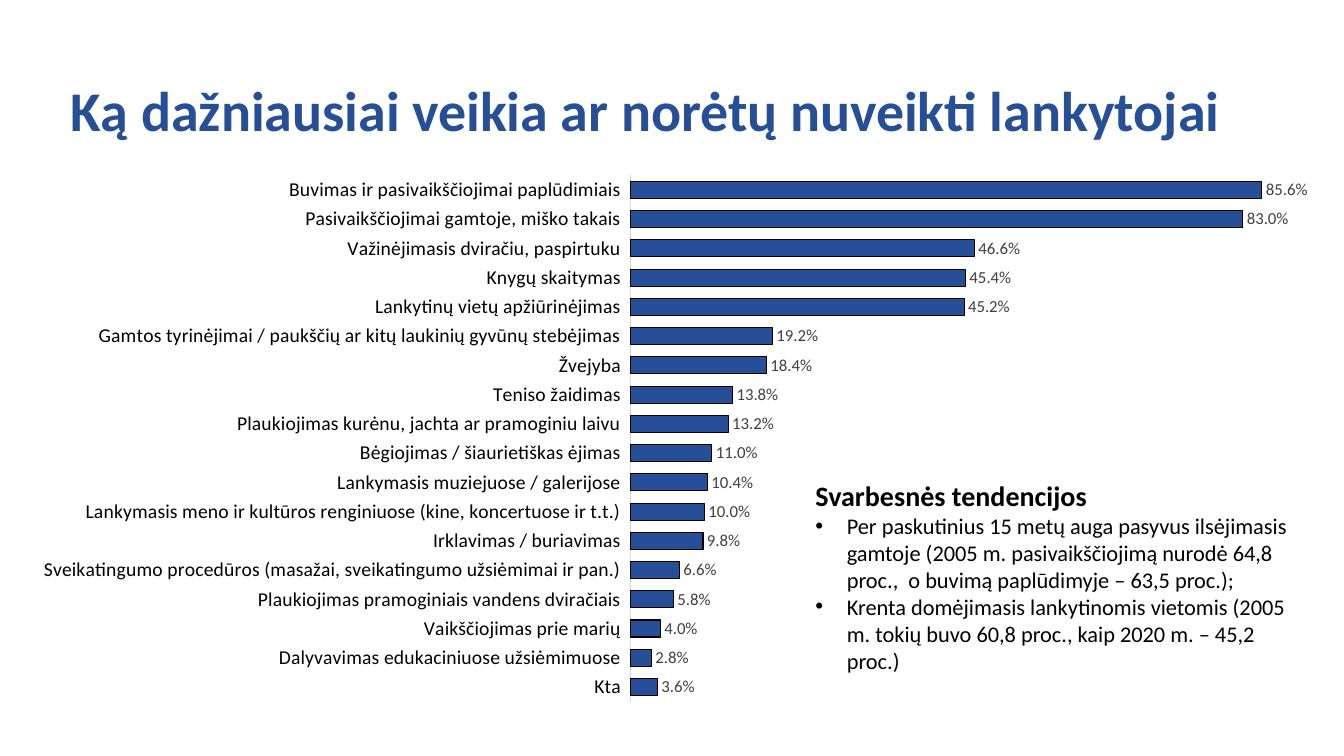
from dataclasses import dataclass
from typing import Any, NamedTuple

from lxml import etree
from pptx import Presentation
from pptx.chart.data import CategoryChartData
from pptx.dml.color import RGBColor
from pptx.enum.chart import XL_CHART_TYPE, XL_LABEL_POSITION, XL_TICK_LABEL_POSITION, XL_TICK_MARK
from pptx.enum.text import MSO_ANCHOR
from pptx.oxml import parse_xml
from pptx.oxml.ns import nsdecls, qn
from pptx.util import Pt

BAR = XL_CHART_TYPE.BAR_CLUSTERED
END = XL_LABEL_POSITION.OUTSIDE_END
LOW = XL_TICK_LABEL_POSITION.LOW
NO_TICK = XL_TICK_MARK.NONE
TOP = MSO_ANCHOR.TOP
MIDDLE = MSO_ANCHOR.MIDDLE


@dataclass(frozen=True)
class Theme:
    font: str = "Calibri"
    blue: RGBColor = RGBColor(0x26, 0x4F, 0x97)
    black: RGBColor = RGBColor(0, 0, 0)
    gray: RGBColor = RGBColor(0x40, 0x40, 0x40)
    pale: RGBColor = RGBColor(0xD9, 0xD9, 0xD9)
    title: float = 40
    head: float = 20
    body: float = 16
    axis: float = 14
    label: float = 12
    base: float = 10
    line: float = 0.75


class Box(NamedTuple):
    left: float
    top: float
    width: float
    height: float


class Bar(NamedTuple):
    name: str
    share: float


@dataclass(frozen=True)
class Para:
    text: str
    size: float
    color: RGBColor
    bold: bool = False
    bullet: bool = False
    space: float = 1.0


THEME = Theme()
SLIDE = (960, 540)
TITLE_BOX = Box(43.2, 28.8, 882.7, 104.4)
CHART_BOX = Box(17.3, 117.4, 925.9, 391.7)
NOTE_BOX = Box(575.3, 338.4, 360.7, 191.5)
PLOT = {"x": 0.468, "y": 0.02, "w": 0.512, "h": 0.96}
INDENT = 22.5
PERCENT = "###0.0%"

BARS = [
    Bar("Buvimas ir pasivaikščiojimai paplūdimiais", 0.856),
    Bar("Pasivaikščiojimai gamtoje, miško takais", 0.83),
    Bar("Važinėjimasis dviračiu, paspirtuku", 0.466),
    Bar("Knygų skaitymas", 0.454),
    Bar("Lankytinų vietų apžiūrinėjimas", 0.452),
    Bar("Gamtos tyrinėjimai / paukščių ar kitų laukinių gyvūnų stebėjimas", 0.192),
    Bar("Žvejyba", 0.184),
    Bar("Teniso žaidimas", 0.138),
    Bar("Plaukiojimas kurėnu, jachta ar pramoginiu laivu", 0.132),
    Bar("Bėgiojimas / šiaurietiškas ėjimas", 0.11),
    Bar("Lankymasis muziejuose / galerijose", 0.104),
    Bar("Lankymasis meno ir kultūros renginiuose (kine, koncertuose ir t.t.)", 0.1),
    Bar("Irklavimas / buriavimas", 0.098),
    Bar("Sveikatingumo procedūros (masažai, sveikatingumo užsiėmimai ir pan.)", 0.066),
    Bar("Plaukiojimas pramoginiais vandens dviračiais", 0.058),
    Bar("Vaikščiojimas prie marių", 0.04),
    Bar("Dalyvavimas edukaciniuose užsiėmimuose", 0.028),
    Bar("Kta", 0.036),
]

TITLE = [
    Para("Ką dažniausiai veikia ar norėtų nuveikti lankytojai",
         THEME.title, THEME.blue, bold=True, space=0.9),
]
NOTES = [
    Para("Svarbesnės tendencijos", THEME.head, THEME.black, bold=True),
    Para("Per paskutinius 15 metų auga pasyvus ilsėjimasis gamtoje "
         "(2005 m. pasivaikščiojimą nurodė 64,8 proc.,  o buvimą paplūdimyje – 63,5 proc.);",
         THEME.body, THEME.black, bullet=True),
    Para("Krenta domėjimasis lankytinomis vietomis "
         "(2005 m. tokių buvo 60,8 proc., kaip 2020 m. – 45,2 proc.)",
         THEME.body, THEME.black, bullet=True),
]


def apply(target: Any, values: dict[str, Any]) -> None:
    for name, value in values.items():
        setattr(target, name, value)


def style(font: Any, size: float, color: RGBColor, bold: bool = False) -> None:
    apply(font, {"name": THEME.font, "size": Pt(size), "bold": bold})
    font.color.rgb = color


def stroke(line: Any, color: RGBColor) -> None:
    line.width = Pt(THEME.line)
    line.color.rgb = color


def place(box: Box) -> list[Pt]:
    return [Pt(side) for side in box]


def add_bullet(para: Any) -> None:
    props = para._p.get_or_add_pPr()
    props.set("marL", str(Pt(INDENT)))
    props.set("indent", str(-Pt(INDENT)))
    etree.SubElement(props, qn("a:buFont")).set("typeface", "Arial")
    etree.SubElement(props, qn("a:buChar")).set("char", "•")


def add_text(slide: Any, box: Box, paras: list[Para], anchor: Any) -> None:
    frame = slide.shapes.add_textbox(*place(box)).text_frame
    apply(frame, {"word_wrap": True, "vertical_anchor": anchor})
    for index, item in enumerate(paras):
        para = frame.add_paragraph() if index else frame.paragraphs[0]
        para.line_spacing = item.space
        run = para.add_run()
        run.text = item.text
        style(run.font, item.size, item.color, item.bold)
        if item.bullet:
            add_bullet(para)


def fix_plot(chart: Any) -> None:
    modes = '<c:layoutTarget val="inner"/><c:xMode val="edge"/><c:yMode val="edge"/>'
    sides = "".join(f'<c:{key} val="{value}"/>' for key, value in PLOT.items())
    layout = parse_xml(
        f'<c:layout {nsdecls("c")}><c:manualLayout>{modes}{sides}</c:manualLayout></c:layout>')
    area = chart._chartSpace.chart.plotArea
    for old in area.findall(qn("c:layout")):
        area.remove(old)
    area.insert(0, layout)


def add_bars(slide: Any, box: Box, bars: list[Bar]) -> None:
    data = CategoryChartData(number_format=PERCENT)
    rows = bars[::-1]
    data.categories = [bar.name for bar in rows]
    data.add_series("Series 1", [bar.share for bar in rows])
    chart = slide.shapes.add_chart(BAR, *place(box), data).chart
    apply(chart, {"has_legend": False, "has_title": False})
    style(chart.font, THEME.base, THEME.black)

    names, scale = chart.category_axis, chart.value_axis
    apply(names, {"major_tick_mark": NO_TICK, "minor_tick_mark": NO_TICK,
                  "tick_label_position": LOW, "has_major_gridlines": False})
    style(names.tick_labels.font, THEME.axis, THEME.black)
    stroke(names.format.line, THEME.pale)
    apply(scale, {"visible": False, "has_major_gridlines": False,
                  "minimum_scale": 0, "maximum_scale": 0.9})
    apply(scale.tick_labels, {"number_format": PERCENT, "number_format_is_linked": False})

    plot = chart.plots[0]
    apply(plot, {"gap_width": 72, "vary_by_categories": False})
    series = plot.series[0]
    series.format.fill.solid()
    series.format.fill.fore_color.rgb = THEME.blue
    stroke(series.format.line, THEME.black)
    labels = series.data_labels
    apply(labels, {"show_value": True, "position": END,
                   "number_format": PERCENT, "number_format_is_linked": False})
    style(labels.font, THEME.label, THEME.gray)
    fix_plot(chart)


def main() -> None:
    deck = Presentation()
    deck.slide_width, deck.slide_height = map(Pt, SLIDE)
    slide = deck.slides.add_slide(deck.slide_layouts[6])
    add_text(slide, TITLE_BOX, TITLE, MIDDLE)
    add_bars(slide, CHART_BOX, BARS)
    add_text(slide, NOTE_BOX, NOTES, TOP)
    deck.save("out.pptx")


if __name__ == "__main__":
    main()
